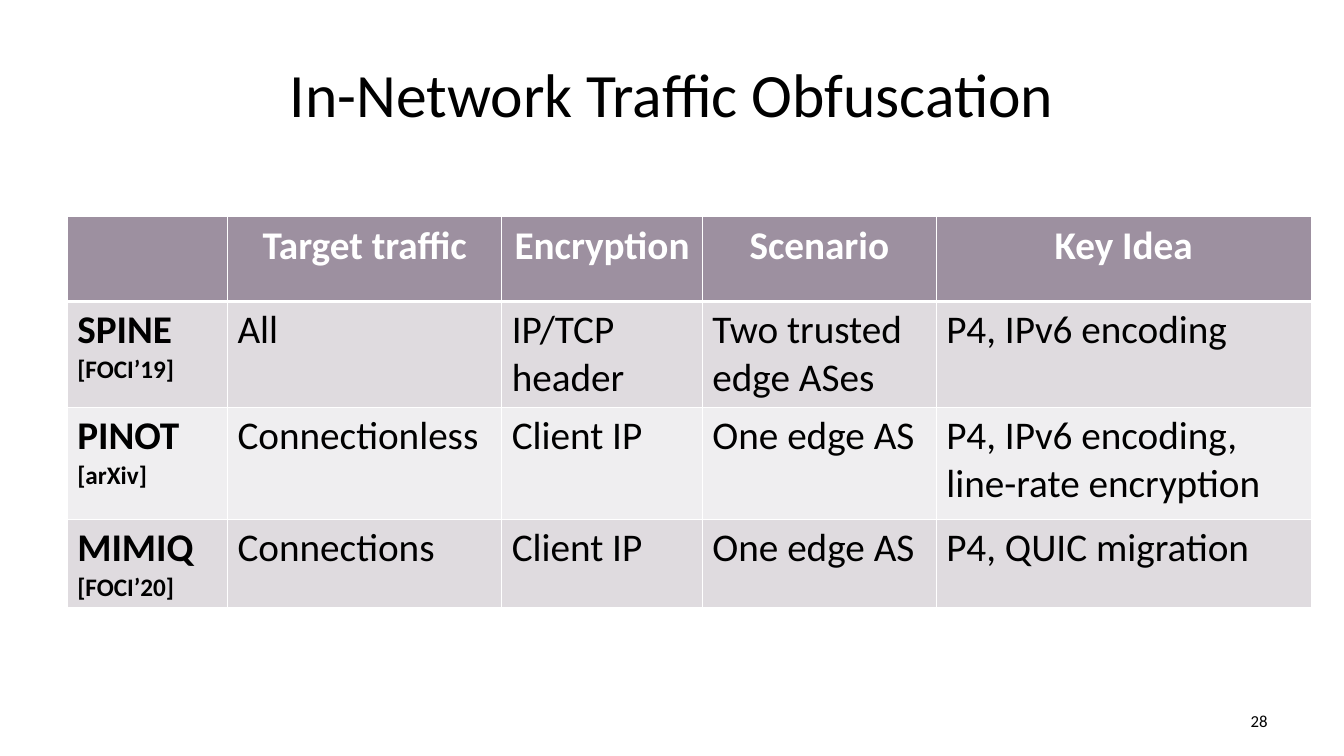
from dataclasses import dataclass

import lxml.etree
import pptx
import pptx.dml.color
import pptx.enum.text
import pptx.oxml.ns
import pptx.util

BLACK = pptx.dml.color.RGBColor(0x00, 0x00, 0x00)
WHITE = pptx.dml.color.RGBColor(0xFF, 0xFF, 0xFF)
MAUVE = pptx.dml.color.RGBColor(0x9D, 0x90, 0xA0)
BAND_DARK = pptx.dml.color.RGBColor(0xDF, 0xDB, 0xDF)
BAND_LIGHT = pptx.dml.color.RGBColor(0xEF, 0xEE, 0xF0)

FONT = "Calibri"
CENTER = pptx.enum.text.PP_ALIGN.CENTER
RIGHT = pptx.enum.text.PP_ALIGN.RIGHT
MIDDLE = pptx.enum.text.MSO_ANCHOR.MIDDLE

SLIDE_WIDTH = pptx.util.Inches(13.33)
SLIDE_HEIGHT = pptx.util.Inches(7.5)

# Table grid, in percent of the slide's width and height
COLUMN_SHARES = [11.93, 20.4, 14.93, 17.4, 27.9]
ROW_SHARES = [11.2, 11.47, 14.8, 11.47]
HEADINGS = ["", "Target traffic", "Encryption", "Scenario", "Key Idea"]


@dataclass
class System:
    name: str
    venue: str
    traffic: str
    encryption: str
    scenario: str
    key_idea: str


SYSTEMS = [
    System("SPINE", "[FOCI’19]", "All", "IP/TCP header",
           "Two trusted edge ASes", "P4, IPv6 encoding"),
    System("PINOT", "[arXiv]", "Connectionless", "Client IP",
           "One edge AS", "P4, IPv6 encoding,\nline-rate encryption"),
    System("MIMIQ", "[FOCI’20]", "Connections", "Client IP",
           "One edge AS", "P4, QUIC migration"),
]


def across(percent: float) -> int:
    return round(SLIDE_WIDTH * percent / 100)


def down(percent: float) -> int:
    return round(SLIDE_HEIGHT * percent / 100)


def place(shape, left: float, top: float, width: float, height: float) -> None:
    shape.left, shape.top = across(left), down(top)
    shape.width, shape.height = across(width), down(height)


def style_paragraph(paragraph, size: float, color=BLACK, bold: bool = False,
                    align=None) -> None:
    paragraph.alignment = align
    for run in paragraph.runs:
        run.font.name = FONT
        run.font.size = pptx.util.Pt(size)
        run.font.bold = bold
        run.font.color.rgb = color


def add_border(cell, side: str, points: float) -> None:
    qn = pptx.oxml.ns.qn
    line = lxml.etree.SubElement(cell._tc.get_or_add_tcPr(), qn(f"a:ln{side}"),
                                 w=str(pptx.util.Pt(points)))
    fill = lxml.etree.SubElement(line, qn("a:solidFill"))
    lxml.etree.SubElement(fill, qn("a:srgbClr"), val=str(WHITE))


def fill_cell(cell, text: str, row: int, column: int) -> None:
    # Thick rule between the heading row and the body
    widths = {"L": 1, "R": 1, "T": 3 if row == 1 else 1, "B": 3 if row == 0 else 1}
    for side, points in widths.items():
        add_border(cell, side, points)
    cell.fill.solid()
    cell.fill.fore_color.rgb = MAUVE if row == 0 else (BAND_LIGHT, BAND_DARK)[row % 2]

    cell.text_frame.text = text
    for index, paragraph in enumerate(cell.text_frame.paragraphs):
        is_venue = column == 0 and index == 1
        style_paragraph(paragraph, size=18 if is_venue else 28,
                        color=WHITE if row == 0 else BLACK,
                        bold=row == 0 or column == 0,
                        align=CENTER if row == 0 else None)


def add_comparison(slide) -> None:
    rows = [HEADINGS] + [
        [f"{s.name}\n{s.venue}", s.traffic, s.encryption, s.scenario, s.key_idea]
        for s in SYSTEMS
    ]
    comparison = slide.shapes.add_table(
        len(ROW_SHARES), len(COLUMN_SHARES), across(5), down(28.67),
        across(sum(COLUMN_SHARES)), down(sum(ROW_SHARES))).table
    for column, share in zip(comparison.columns, COLUMN_SHARES):
        column.width = across(share)
    for row, share in zip(comparison.rows, ROW_SHARES):
        row.height = down(share)
    for r, texts in enumerate(rows):
        for c, text in enumerate(texts):
            fill_cell(comparison.cell(r, c), text, r, c)


def main() -> None:
    deck = pptx.Presentation()
    deck.slide_width, deck.slide_height = SLIDE_WIDTH, SLIDE_HEIGHT
    slide = deck.slides.add_slide(deck.slide_layouts[5])

    # Title
    title = slide.shapes.title
    place(title, 5, 4, 90, 16.67)
    title.text_frame.text = "In-Network Traffic Obfuscation"
    title.text_frame.vertical_anchor = MIDDLE
    style_paragraph(title.text_frame.paragraphs[0], size=44, align=CENTER)

    # Comparison of the systems
    add_comparison(slide)

    # Page number
    page_number = slide.shapes.add_textbox(0, 0, 0, 0)
    place(page_number, 71.72, 92.67, 23.33, 5.33)
    page_number.text_frame.word_wrap = True
    page_number.text_frame.vertical_anchor = MIDDLE
    page_number.text_frame.text = "28"
    style_paragraph(page_number.text_frame.paragraphs[0], size=12, align=RIGHT)

    deck.save("out.pptx")


if __name__ == "__main__":
    main()
